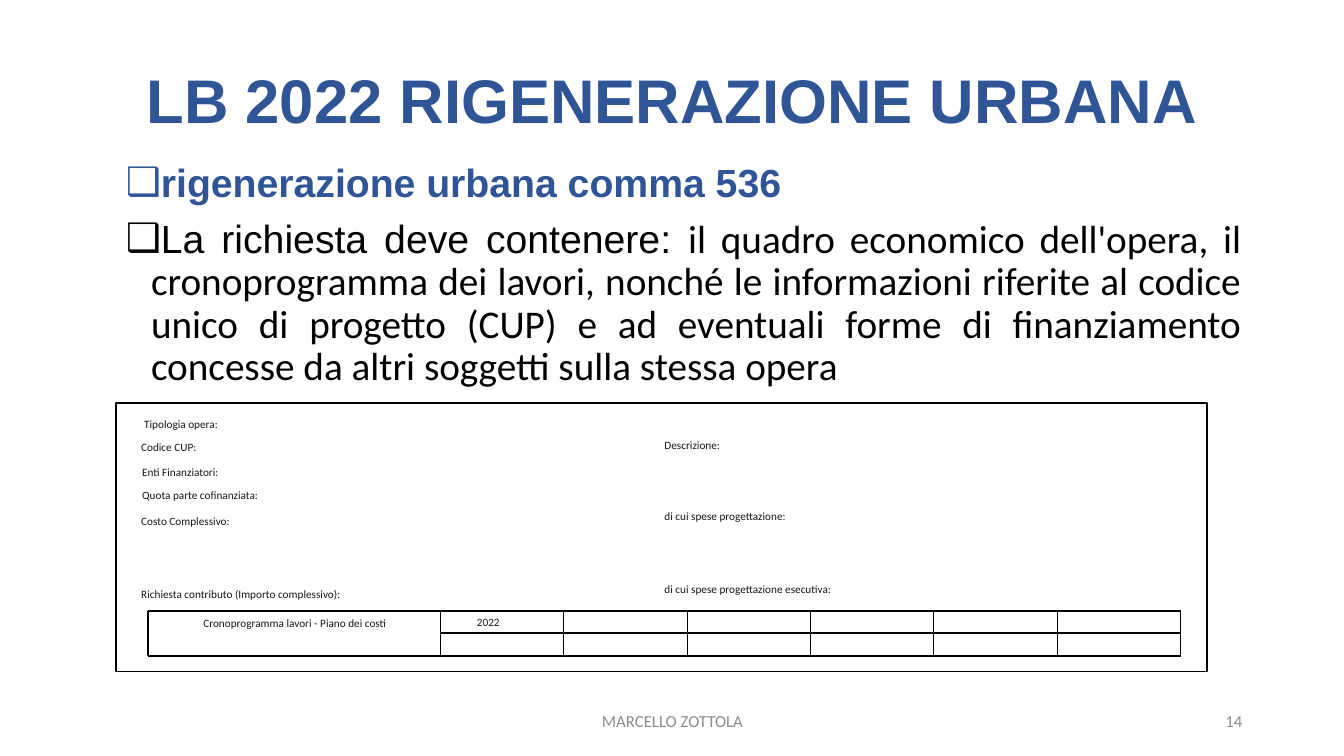
from lxml import etree
from pptx import Presentation
from pptx import util as u
from pptx.dml.color import RGBColor
from pptx.enum import shapes, text
from pptx.oxml import ns

SCALE = 9144
BLUE, BLACK, GREY, INK = "2F5597", "000000", "8C8C8C", "181717"
LEFT, CENTER, RIGHT, JUSTIFY = (text.PP_ALIGN.LEFT, text.PP_ALIGN.CENTER,
                                text.PP_ALIGN.RIGHT, text.PP_ALIGN.JUSTIFY)
TOP, MIDDLE = text.MSO_ANCHOR.TOP, text.MSO_ANCHOR.MIDDLE


def px(length):
    return u.Emu(length * SCALE)


def color(value):
    return RGBColor.from_string(value)


class Deck:
    """Holds the text style and the current slide, and draws its elements."""

    def __init__(self, width, height):
        self.presentation = Presentation()
        self.presentation.slide_width = px(width)
        self.presentation.slide_height = px(height)
        self.font, self.label_size = "Calibri", 8
        self.slide = self.presentation.slides.add_slide(
            self.presentation.slide_layouts[6])

    def run(self, paragraph, words, size, ink, font=None, bold=False):
        run = paragraph.add_run()
        run.text = words
        run.font.size, run.font.bold = u.Pt(size), bold
        run.font.name = font or self.font
        run.font.color.rgb = color(ink)

    def indent(self, paragraph, left, first):
        properties = paragraph._p.get_or_add_pPr()
        properties.set("marL", str(px(left)))
        properties.set("indent", str(px(first)))
        return properties

    def box(self, left, top, width, height, anchor=TOP, margins=(10, 5)):
        shape = self.slide.shapes.add_textbox(px(left), px(top), px(width), px(height))
        frame = shape.text_frame
        frame.word_wrap, frame.vertical_anchor = True, anchor
        frame.margin_left = frame.margin_right = px(margins[0])
        frame.margin_top = frame.margin_bottom = px(margins[1])
        return frame

    def line(self, bounds, words, align, size, ink, font=None, bold=False, spacing=1.0):
        paragraph = self.box(*bounds, anchor=MIDDLE).paragraphs[0]
        paragraph.alignment, paragraph.line_spacing = align, spacing
        self.run(paragraph, words, size, ink, font, bold)

    def bullets(self, bounds, items, size):
        frame = self.box(*bounds)
        for number, (align, runs) in enumerate(items):
            paragraph = frame.add_paragraph() if number else frame.paragraphs[0]
            paragraph.alignment, paragraph.line_spacing = align, 0.9
            paragraph.space_before = u.Pt(10)
            properties = self.indent(paragraph, 25, -25)
            etree.SubElement(properties, ns.qn("a:buFont"), typeface="Arial")
            etree.SubElement(properties, ns.qn("a:buChar"), char="❑")
            for words, ink, font, bold in runs:
                self.run(paragraph, words, size, ink, font, bold)

    def outline(self, shape):
        shape.shadow.inherit = False
        shape.fill.background()
        shape.line.color.rgb, shape.line.width = color(BLACK), u.Pt(1)

    def frame(self, left, top, width, height):
        self.outline(self.slide.shapes.add_shape(
            shapes.MSO_SHAPE.RECTANGLE, px(left), px(top), px(width), px(height)))

    def grid(self, columns, rows):
        left, right, top, bottom = columns[0], columns[-1], rows[0], rows[-1]
        strokes = [((left, top), (right, top)),
                   ((columns[1], rows[1]), (right, rows[1])),
                   ((left, bottom), (right, bottom))]
        strokes += [((x, top), (x, bottom)) for x in columns]
        builder = self.slide.shapes.build_freeform(left, top, scale=SCALE)
        for start, end in strokes:
            builder.move_to(*start)
            builder.add_line_segments([end], close=False)
        self.outline(builder.convert_to_shape())

    def label(self, bounds, words, align=JUSTIFY, spacing=u.Pt(8.9)):
        paragraph = self.box(*bounds, margins=(0, 0)).paragraphs[0]
        self.indent(paragraph, 22, -1)
        paragraph.alignment, paragraph.line_spacing = align, spacing
        paragraph.space_after = u.Pt(10.8)
        self.run(paragraph, words, self.label_size, INK)

    def save(self):
        self.presentation.save("out.pptx")


def main():
    deck = Deck(1333, 750)
    deck.line((92, 40, 1150, 126), "LB 2022 RIGENERAZIONE URBANA", CENTER, 44,
              BLUE, "Arial", True, 0.9)
    deck.bullets((115, 157, 1126, 526), [
        (LEFT, [("rigenerazione urbana comma 536", BLUE, "Arial", True)]),
        (JUSTIFY, [
            ("La richiesta deve contenere: ", BLACK, "Arial", False),
            ("il quadro economico dell'opera, il cronoprogramma dei lavori, nonché le "
             "informazioni riferite al codice unico di progetto (CUP) e ad eventuali "
             "forme di finanziamento concesse da altri soggetti sulla stessa opera",
             BLACK, "Calibri", False)]),
    ], 28)
    deck.line((442, 695, 450, 40), "MARCELLO ZOTTOLA", CENTER, 12, GREY)
    deck.line((942, 695, 300, 40), "14", RIGHT, 12, GREY)

    deck.frame(115, 400, 1082, 266)
    years = [437 + round(number * 734 / 6) for number in range(7)]
    deck.grid([147] + years, [606, 628, 651])
    for bounds, words in (
            ((119, 438, 160, 20), "Codice CUP:"),
            ((638, 436, 172, 20), "Descrizione:"),
            ((120, 463, 217, 16), "Enti Finanziatori:"),
            ((120, 485, 257, 17), "Quota parte cofinanziata:"),
            ((119, 511, 218, 13), "Costo Complessivo:"),
            ((638, 506, 297, 11), "di cui spese progettazione:"),
            ((452, 611, 106, 15), "2022")):
        deck.label(bounds, words)
    deck.label((122, 413, 168, 29), "Tipologia opera:", spacing=1.08)
    deck.label((119, 582, 372, 28), "Richiesta contributo (Importo complessivo):",
               spacing=1.08)
    deck.label((638, 579, 412, 24), "di cui spese progettazione esecutiva:", LEFT)
    deck.label((160, 612, 244, 28), "Cronoprogramma lavori - Piano dei costi", CENTER)
    deck.save()


if __name__ == "__main__":
    main()
